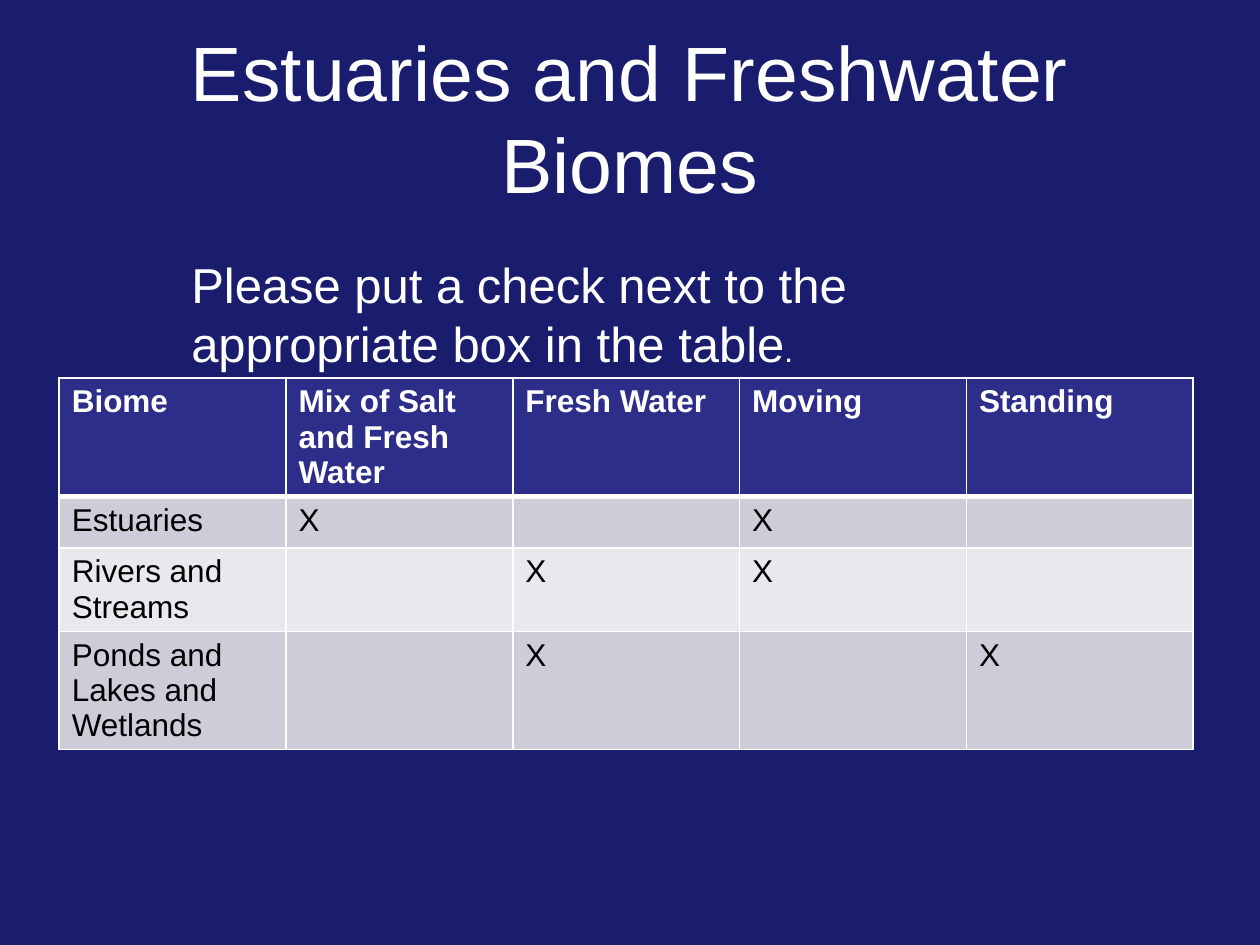
from lxml.etree import SubElement
from pptx import Presentation
from pptx.dml.color import RGBColor
from pptx.enum.text import MSO_ANCHOR, PP_ALIGN
from pptx.oxml.ns import qn
from pptx.util import Inches, Pt

WIDTH, HEIGHT = 10, 7.5
WHITE, BLACK, NAVY, INDIGO = "FFFFFF", "000000", "1A1D6E", "2D2D8A"
BANDS = ["CDCDDA", "E8E8ED"]
HEADERS = ["Biome", "Mix of Salt and Fresh Water", "Fresh Water", "Moving", "Standing"]
CHECKS = {
    "Estuaries": ["Mix of Salt and Fresh Water", "Moving"],
    "Rivers and Streams": ["Fresh Water", "Moving"],
    "Ponds and Lakes and Wetlands": ["Fresh Water", "Standing"],
}
ROW_HEIGHTS = [0.94, 0.41, 0.66, 0.94]


def rgb(value):
    return RGBColor.from_string(value)


class SlideBuilder:
    """Holds the style and the current slide; boxes are shares of its size."""

    font = "Arial"

    def __init__(self, prs):
        self.s = prs.slides.add_slide(prs.slide_layouts[5])
        fill = self.s.background.fill
        fill.solid()
        fill.fore_color.rgb = rgb(NAVY)

    def box(self, x, y, w, h):
        return [Inches(v) for v in (x * WIDTH, y * HEIGHT, w * WIDTH, h * HEIGHT)]

    def style(self, font, size, color, bold=False):
        font.name, font.size, font.bold = self.font, Pt(size), bold
        font.color.rgb = rgb(color)

    def title(self, text, *share):
        sp = self.s.shapes.title
        sp.left, sp.top, sp.width, sp.height = self.box(*share)
        tf = sp.text_frame
        tf.text = text
        tf.vertical_anchor = MSO_ANCHOR.MIDDLE
        p = tf.paragraphs[0]
        p.alignment = PP_ALIGN.CENTER
        self.style(p.font, 44, WHITE)

    def text(self, runs, *share):
        """Add one paragraph made of (text, size) runs."""
        tf = self.s.shapes.add_textbox(*self.box(*share)).text_frame
        tf.word_wrap = True
        for words, size in runs:
            r = tf.paragraphs[0].add_run()
            r.text = words
            self.style(r.font, size, WHITE)

    def table(self, rows, heights, *share):
        shape = self.s.shapes.add_table(len(rows), len(rows[0]), *self.box(*share))
        for row, height in zip(shape.table.rows, heights):
            row.height = Inches(height)
        for i, row in enumerate(rows):
            for j, words in enumerate(row):
                self.cell(shape.table.cell(i, j), words, i)

    def cell(self, cell, words, row):
        header = row == 0
        cell.text = words
        self.style(cell.text_frame.paragraphs[0].font, 18,
                   WHITE if header else BLACK, header)
        # Borders come before the fill in a cell's properties.
        self.border(cell, "L", 1)
        self.border(cell, "R", 1)
        self.border(cell, "T", 3 if row == 1 else 1)
        self.border(cell, "B", 3 if header else 1)
        cell.fill.solid()
        cell.fill.fore_color.rgb = rgb(INDIGO if header else BANDS[(row - 1) % 2])

    def border(self, cell, side, width):
        ln = SubElement(cell._tc.get_or_add_tcPr(), qn(f"a:ln{side}"), w=str(Pt(width)))
        SubElement(SubElement(ln, qn("a:solidFill")), qn("a:srgbClr"), val=WHITE)


def main():
    prs = Presentation()
    prs.slide_width, prs.slide_height = Inches(WIDTH), Inches(HEIGHT)
    slide = SlideBuilder(prs)
    slide.title("Estuaries and Freshwater Biomes", 0.05, 0.04, 0.9, 1 / 6)
    rows = [HEADERS] + [
        [biome] + ["X" if header in checks else "" for header in HEADERS[1:]]
        for biome, checks in CHECKS.items()
    ]
    slide.table(rows, ROW_HEIGHTS, 0.047, 0.4, 0.9, sum(ROW_HEIGHTS) / HEIGHT)
    slide.text([("Please put a check next to the appropriate box in the table", 28),
                (".", 18)], 0.142, 0.263, 0.623, 0.14)
    prs.save("out.pptx")


if __name__ == "__main__":
    main()
